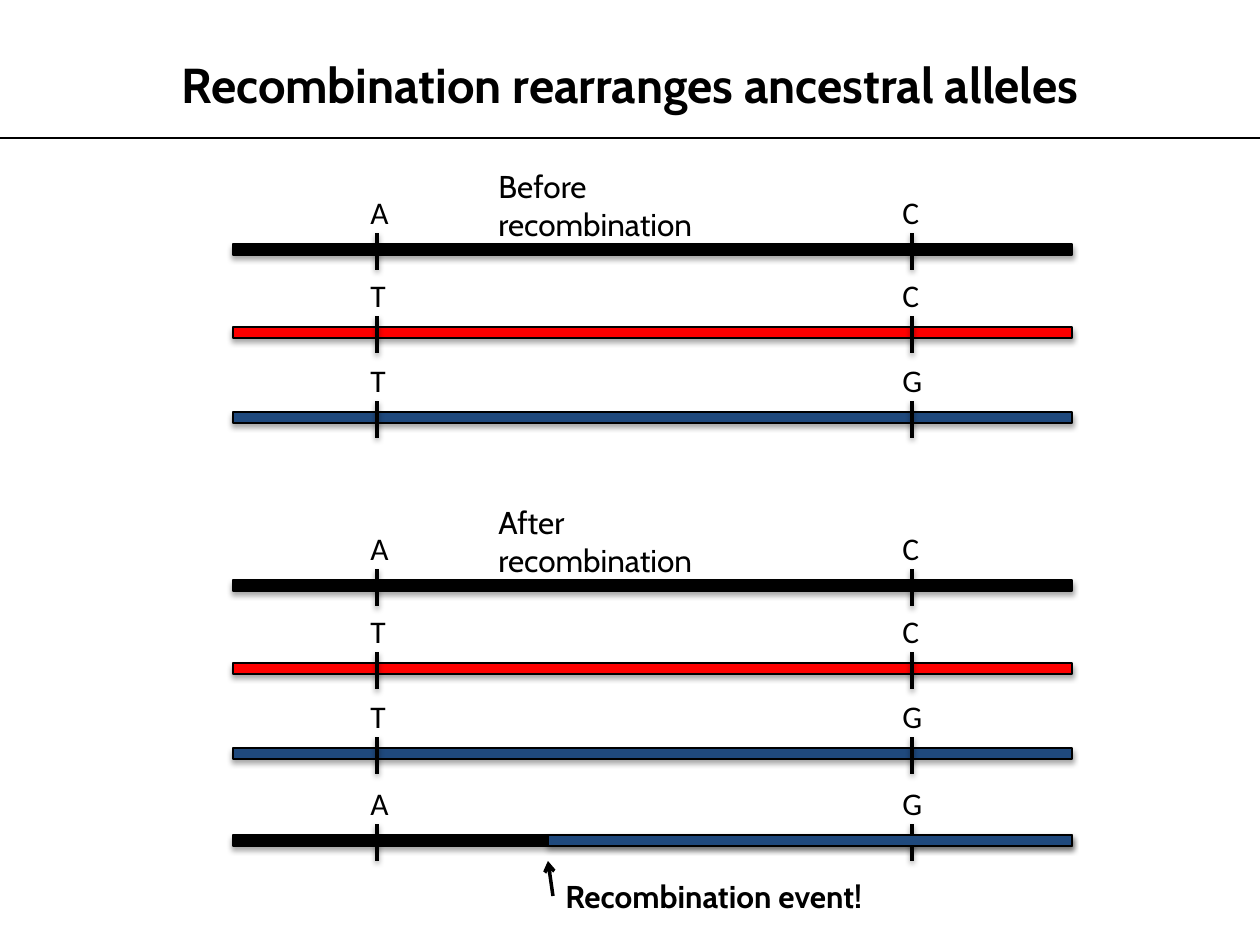
from lxml.etree import SubElement as Sub
from pptx import Presentation
from pptx.dml.color import RGBColor
from pptx.enum.shapes import MSO_CONNECTOR as Conn, MSO_SHAPE as Shape
from pptx.enum.text import MSO_AUTO_SIZE as Auto, PP_ALIGN as Align
from pptx.oxml.ns import qn
from pptx.util import Pt

TITLE = "Recombination rearranges ancestral alleles"
BLACK, RED, BLUE = "000000", "FF0000", "1F497D"
ROWS = [(0, BLACK, "A", "C"), (83, RED, "T", "C"), (168, BLUE, "T", "G")]
CHILD = (255, BLACK, "A", "G")
GROUPS = [
    (244, "Before recombination", 306, ROWS),
    (580, "After recombination", 284, ROWS + [CHILD]),
]
WIDE = {"A": 44, "T": 42, "C": 44, "G": 45}
LEFT, RIGHT, THICK = 233, 1072, 11
BREAK = 548
SITES = [(377, 358), (912, 890)]

prs = Presentation()


def px(n):
    return round(n * 914400 / 126)


def rgb(code):
    return RGBColor.from_string(code)


prs.slide_width, prs.slide_height = px(1260), px(945)
slide = prs.slides.add_slide(prs.slide_layouts[6])
shapes = slide.shapes


def shade(effects, dist, alpha):
    shadow = Sub(effects, qn("a:outerShdw"), blurRad="40000", dist=str(dist),
                 dir="5400000", rotWithShape="0")
    color = Sub(shadow, qn("a:srgbClr"), val=BLACK)
    Sub(color, qn("a:alpha"), val=str(alpha * 1000))


def bar(x, y, end, color):
    box = shapes.add_shape(Shape.RECTANGLE, px(x), px(y), px(end - x), px(THICK))
    box.fill.solid()
    box.fill.fore_color.rgb = rgb(color)
    box.line.color.rgb = rgb(BLACK)
    box.line.width = Pt(0.75)
    box.shadow.inherit = False
    shade(box._element.spPr.find(qn("a:effectLst")), 23000, 35)


def line(x1, y1, x2, y2, width=2, shadow=False, arrow=False):
    link = shapes.add_connector(Conn.STRAIGHT, px(x1), px(y1), px(x2), px(y2))
    link.line.color.rgb = rgb(BLACK)
    link.line.width = Pt(width)
    if arrow:
        Sub(link.line._get_or_add_ln(), qn("a:tailEnd"), type="arrow")
    effects = Sub(link._element.spPr, qn("a:effectLst"))
    if shadow:
        shade(effects, 20000, 38)


def text(x, y, w, h, words, font="Cabin", size=18, bold=False, wrap=True, align=Align.LEFT):
    frame = shapes.add_textbox(px(x), px(y), px(w), px(h)).text_frame
    frame.word_wrap = wrap
    frame.auto_size = Auto.SHAPE_TO_FIT_TEXT
    para = frame.paragraphs[0]
    para.alignment = align
    run = para.add_run()
    run.text = words
    run.font.name = font
    run.font.size = Pt(size)
    run.font.bold = bold
    run.font.color.rgb = rgb(BLACK)


line(0, 138, 1260, 138, 0.75)
text(0, 48, 1260, 72, TITLE, size=28, bold=True, align=Align.CENTER)

for top, name, width, rows in GROUPS:
    for shift, color, *bases in rows:
        y = top + shift
        bar(LEFT, y, RIGHT, color)
        for base, (tick, x) in zip(bases, SITES):
            text(x, y - 57, WIDE[base], 50, base, font="Calibri", wrap=False)
            line(tick, y + 26, tick, y - 11, shadow=True)
    text(486, top - 83, width, 50, name)

bar(BREAK, y, RIGHT, BLUE)
text(553, 871, 379, 50, "Recombination event!", bold=True, wrap=False)
line(553, 896, BREAK, 861, arrow=True)

prs.save("out.pptx")
